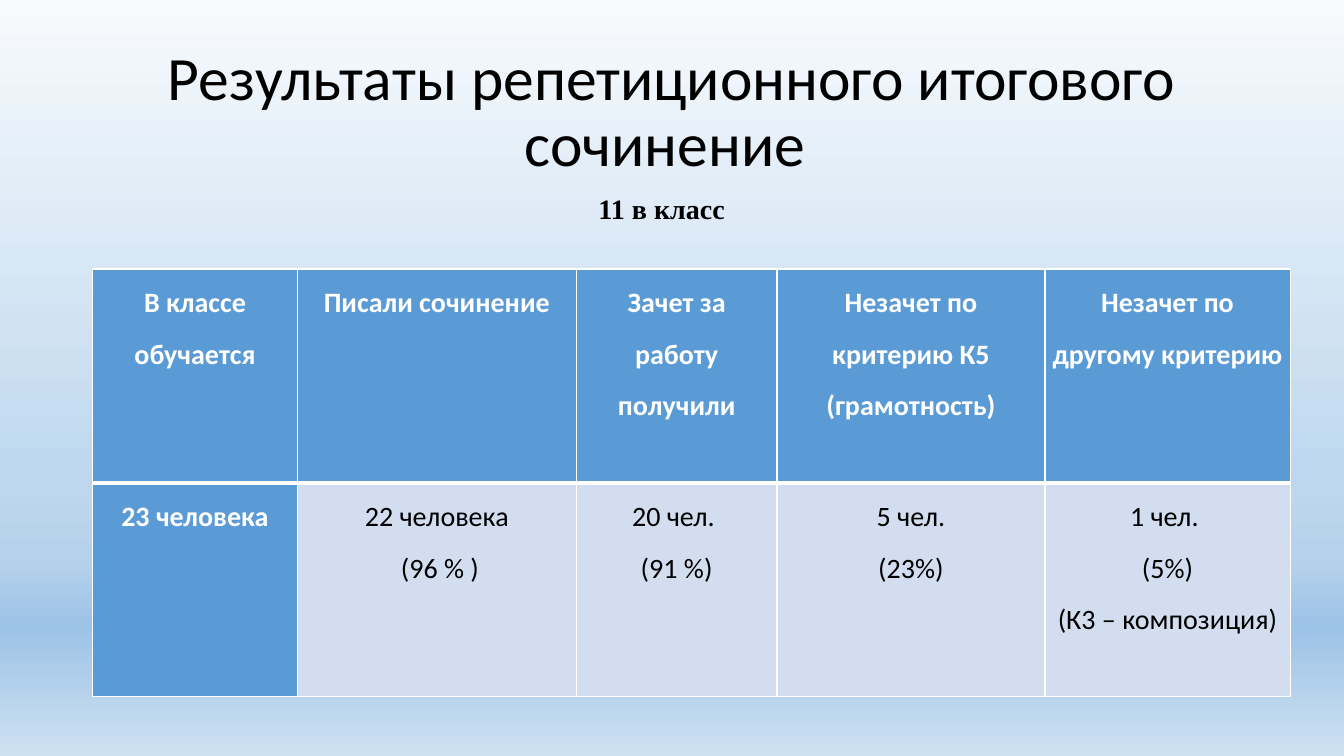
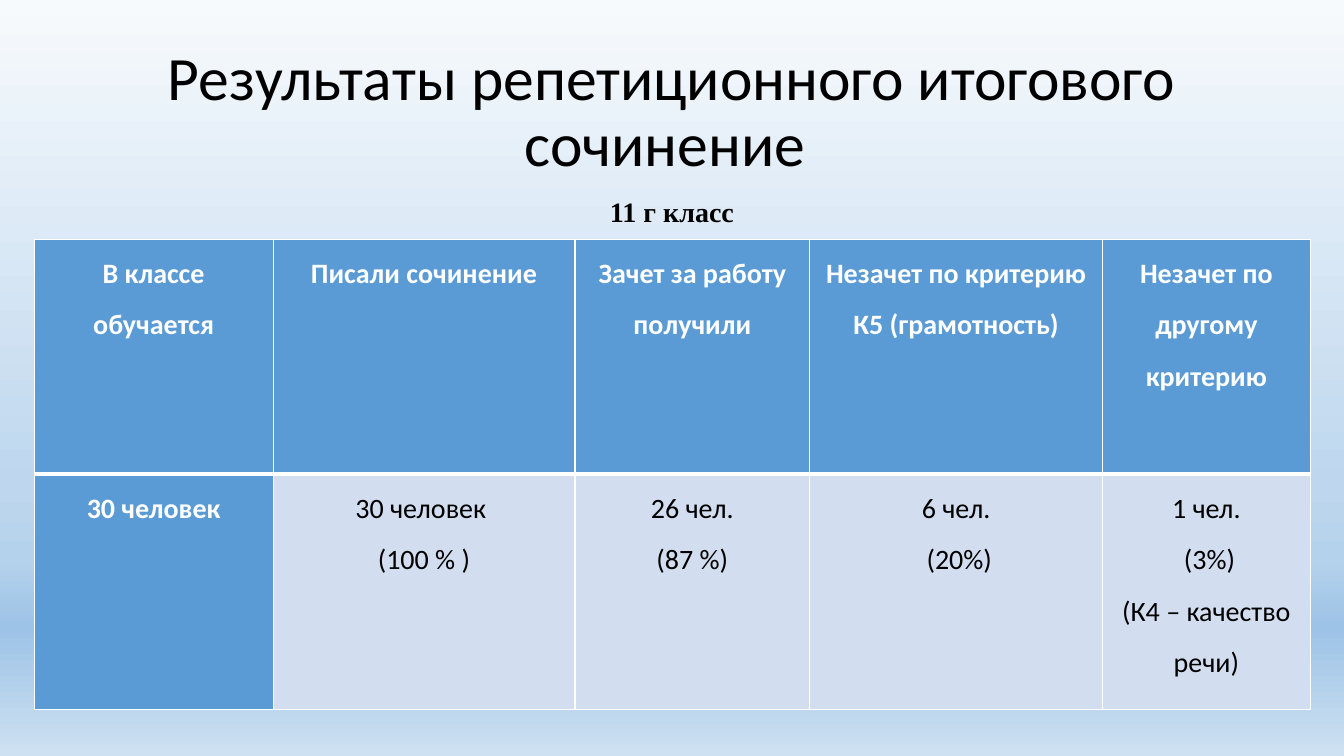
"""Builds two slides with the results of a rehearsal essay."""
from lxml import etree
from pptx import Presentation
from pptx.dml.color import RGBColor
from pptx.enum import text
from pptx.oxml import ns
from pptx.util import Pt

BLACK, WHITE = "000000", "FFFFFF"
BLUE, PALE_BLUE = "5B9BD5", "D2DEEF"
BACKGROUND_STOPS = [(0, "F7FAFD"), (64, "BED7EE"), (74, "B5D2EC"), (83, "9DC3E6"), (100, "CEE1F2")]
BODY_FONT, CLASS_FONT = "Calibri", "Times New Roman"
TITLE = "Результаты репетиционного итогового сочинение "
TITLE_BOX = (66, 28.8, 828, 104.4)
HEADINGS = [
    "В классе обучается",
    "Писали сочинение",
    "Зачет за работу получили",
    "Незачет по критерию К5 (грамотность)",
    "Незачет по другому критерию",
]
RESULTS = [
    {
        "class_name": "11 в класс",
        "class_box": (0, 133.2, 945.4, 31.7),
        "table_box": (66.2, 192.2, 855.4, 305.6),
        "widths": [146.2, 199.4, 143.2, 191.5, 175.1],
        "values": ["23 человека", "22 человека\n (96 % )", "20 чел. \n(91 %)", "5 чел.\n(23%)",
                   "1 чел. \n(5%)\n(К3 – композиция)"],
    },
    {
        "class_name": "11 г класс",
        "class_box": (0, 133.2, 960, 36),
        "table_box": (24.5, 171, 911.5, 335.6),
        "widths": [170.6, 215.6, 167.8, 209.1, 148.4],
        "values": ["30 человек", "30 человек \n(100 % )", "26 чел.\n(87 %)", "6 чел.\n (20%)",
                   "1 чел.\n (3%)\n(К4 – качество речи)"],
    },
]


def rgb(value):
    """Turn a hex string into a colour."""
    return RGBColor.from_string(value)


def points(box):
    """Turn a box of numbers into lengths in points."""
    return [Pt(length) for length in box]


def write(frame, words, size, font=BODY_FONT, color=BLACK, bold=False, spacing=None):
    """Fill a text frame with centred, formatted paragraphs."""
    frame.text = words
    for paragraph in frame.paragraphs:
        paragraph.alignment = text.PP_ALIGN.CENTER
        paragraph.line_spacing = spacing
        for run in paragraph.runs:
            run.font.size = Pt(size)
            run.font.name = font
            run.font.bold = bold
            run.font.color.rgb = rgb(color)


def set_background(master):
    """Give the master a vertical gradient that every slide inherits."""
    fill = master.background.fill
    fill.gradient()
    fill.gradient_angle = 270
    stops = master.element.find(".//" + ns.qn("a:gsLst"))
    for stop in list(stops):
        stops.remove(stop)
    for position, color in BACKGROUND_STOPS:
        stop = etree.SubElement(stops, ns.qn("a:gs"), pos=str(position * 1000))
        etree.SubElement(stop, ns.qn("a:srgbClr"), val=color)


def set_borders(cell, top, bottom):
    """Draw white cell borders, with the given top and bottom widths."""
    properties = cell._tc.get_or_add_tcPr()
    for side, width in (("L", 1), ("R", 1), ("T", top), ("B", bottom)):
        line = etree.SubElement(properties, ns.qn("a:ln" + side), w=str(int(Pt(width))))
        fill = etree.SubElement(line, ns.qn("a:solidFill"))
        etree.SubElement(fill, ns.qn("a:srgbClr"), val=WHITE)


def add_title(slide, box):
    """Place and format the slide title."""
    title = slide.shapes.title
    title.left, title.top, title.width, title.height = points(box)
    write(title.text_frame, TITLE, 44, spacing=0.9)
    title.text_frame.auto_size = text.MSO_AUTO_SIZE.NONE
    title.text_frame.vertical_anchor = text.MSO_ANCHOR.MIDDLE


def add_class_name(slide, box, class_name):
    """Place the class name under the title."""
    frame = slide.shapes.add_textbox(*points(box)).text_frame
    frame.word_wrap = True
    frame.vertical_anchor = text.MSO_ANCHOR.MIDDLE
    write(frame, class_name, 20, CLASS_FONT, bold=True)


def add_results_table(slide, box, widths, values):
    """Place the table with headings above the values of one class."""
    rows = [HEADINGS, values]
    table = slide.shapes.add_table(len(rows), len(widths), *points(box)).table
    for column, width in zip(table.columns, widths):
        column.width = Pt(width)
    for row_index, row in enumerate(rows):
        for column_index, words in enumerate(row):
            cell = table.cell(row_index, column_index)
            heading = row_index == 0 or column_index == 0
            cell.margin_left = cell.margin_right = Pt(5)
            cell.margin_top = cell.margin_bottom = 0
            set_borders(cell, *((1, 3) if row_index == 0 else (3, 1)))
            cell.fill.solid()
            cell.fill.fore_color.rgb = rgb(BLUE if heading else PALE_BLUE)
            write(cell.text_frame, words, 20, color=WHITE if heading else BLACK,
                  bold=heading, spacing=1.5)


def add_results_slide(presentation, class_name, class_box, table_box, widths, values):
    """Add the slide with the results of one class."""
    slide = presentation.slides.add_slide(presentation.slide_layouts[5])
    add_title(slide, TITLE_BOX)
    add_results_table(slide, table_box, widths, values)
    add_class_name(slide, class_box, class_name)


def main():
    """Build and save the presentation."""
    presentation = Presentation()
    presentation.slide_width, presentation.slide_height = Pt(960), Pt(540)
    set_background(presentation.slide_master)
    for result in RESULTS:
        add_results_slide(presentation, **result)
    presentation.save("out.pptx")


if __name__ == "__main__":
    main()
